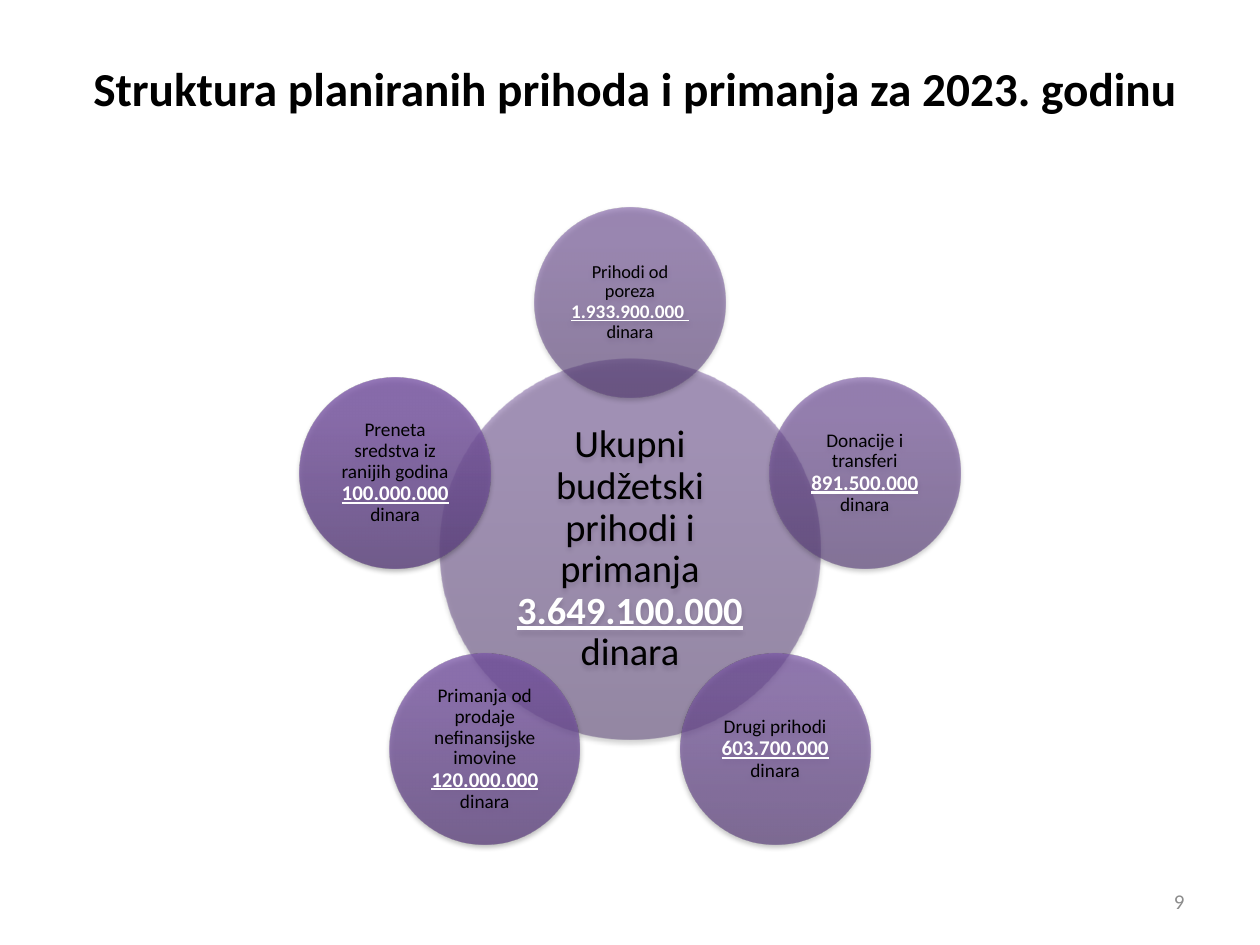
import math

import lxml.etree
import pptx
import pptx.dml.color
import pptx.enum.shapes
import pptx.enum.text
import pptx.oxml
import pptx.oxml.ns
import pptx.util

Inches = pptx.util.Inches
Align = pptx.enum.text.PP_ALIGN

COLORS = {"black": "000000", "white": "FFFFFF", "red": "FF0000", "gray": "8C8C8C"}
CENTER_X, CENTER_Y = 5, 4.36
CENTER_SIZE, SATELLITE_SIZE = 3.02, 1.51
ORBIT = 1.96
STOP_POSITIONS = (0, 80, 100)


class SlideBuilder:
    """Holds the text style and the slide being built."""

    def __init__(self, slide, font="Calibri"):
        self.slide = slide
        self.font = font

    def add_run(self, paragraph, text, size, color="black", bold=False, underline=False):
        run = paragraph.add_run()
        run.text = text
        run.font.name = self.font
        run.font.size = pptx.util.Pt(size)
        run.font.bold = bold
        run.font.underline = underline
        run.font.color.rgb = pptx.dml.color.RGBColor.from_string(COLORS[color])

    def fill_text(self, shape, runs, alignment, inset=None):
        frame = shape.text_frame
        frame.word_wrap = True
        frame.vertical_anchor = pptx.enum.text.MSO_ANCHOR.MIDDLE
        if inset is not None:
            frame.margin_left = frame.margin_right = Inches(inset)
            frame.margin_top = frame.margin_bottom = Inches(inset)
        paragraph = frame.paragraphs[0]
        paragraph.alignment = alignment
        for run in runs:
            self.add_run(paragraph, *run)
        return paragraph

    def text(self, left, top, width, height, runs, alignment):
        box = self.slide.shapes.add_textbox(
            Inches(left), Inches(top), Inches(width), Inches(height))
        self.fill_text(box, runs, alignment)

    def circle(self, center_x, center_y, size, stops, opacity, runs, inset):
        circle = self.slide.shapes.add_shape(
            pptx.enum.shapes.MSO_SHAPE.OVAL,
            Inches(center_x - size / 2), Inches(center_y - size / 2),
            Inches(size), Inches(size))
        circle.line.fill.background()
        self.gradient(circle, stops, opacity)
        self.shadow(circle)
        paragraph = self.fill_text(circle, runs, Align.CENTER, inset)
        paragraph.line_spacing = 0.9

    def gradient(self, shape, stops, opacity):
        stop_xml = "".join(
            f'<a:gs pos="{position * 1000}"><a:srgbClr val="{color}">'
            f'<a:alpha val="{opacity * 1000}"/></a:srgbClr></a:gs>'
            for position, color in zip(STOP_POSITIONS, stops))
        fill = pptx.oxml.parse_xml(
            f'<a:gradFill {pptx.oxml.ns.nsdecls("a")} rotWithShape="1">'
            f'<a:gsLst>{stop_xml}</a:gsLst><a:lin ang="16200000" scaled="0"/></a:gradFill>')
        shape.element.spPr.find(pptx.oxml.ns.qn("a:prstGeom")).addnext(fill)

    def shadow(self, shape):
        shape.shadow.inherit = False
        effects = shape.element.spPr.find(pptx.oxml.ns.qn("a:effectLst"))
        shadow = lxml.etree.SubElement(
            effects, pptx.oxml.ns.qn("a:outerShdw"),
            blurRad=str(pptx.util.Pt(3.1)), dist=str(pptx.util.Pt(1.8)),
            dir="5400000", rotWithShape="0")
        color = lxml.etree.SubElement(
            shadow, pptx.oxml.ns.qn("a:srgbClr"), val=COLORS["black"])
        lxml.etree.SubElement(color, pptx.oxml.ns.qn("a:alpha"), val="35000")


def amount_runs(label, amount):
    return [
        (label + " ", 11),
        (amount, 12, "white", True, True),
        (" ", 12, "white", True),
        ("dinara", 11),
    ]


def main():
    presentation = pptx.Presentation()
    presentation.slide_width, presentation.slide_height = Inches(10), Inches(7.5)
    builder = SlideBuilder(presentation.slides.add_slide(presentation.slide_layouts[6]))

    title = "Struktura planiranih prihoda i primanja za 2023. godinu"
    builder.text(0.54, 0.27, 9, 0.85, [(title, 27, "black", True)], Align.CENTER)
    builder.text(7.17, 6.95, 2.33, 0.4, [("9", 12, "gray")], Align.RIGHT)

    total = [
        ("Ukupni budžetski prihodi i primanja ", 22),
        ("3.649.100.000", 22, "white", True, True),
        (" dinara", 22),
    ]
    builder.circle(CENTER_X, CENTER_Y, CENTER_SIZE,
                   ("563D74", "705097", "704F99"), 50, total, 0.03)

    taxes = [
        ("Prihodi od poreza ", 10.5),
        ("1.933.900.000 ", 11, "white", True, True),
        (" ", 11, "red", False, True),
        ("dinara", 10.5),
    ]
    satellites = [
        (taxes, ("583E77", "72519A", "73509C")),
        (amount_runs("Donacije i transferi", "891.500.000"),
         ("5A407A", "75539E", "7551A0")),
        (amount_runs("Drugi prihodi", "603.700.000"),
         ("5C417C", "7754A1", "7753A4")),
        (amount_runs("Primanja od prodaje nefinansijske imovine", "120.000.000"),
         ("5E427E", "7956A4", "7A55A6")),
        (amount_runs("Preneta sredstva iz ranijih godina", "100.000.000"),
         ("5F4580", "7C59A6", "7C58A8")),
    ]
    for index, (runs, stops) in enumerate(satellites):
        angle = math.tau * index / len(satellites)
        builder.circle(CENTER_X + ORBIT * math.sin(angle),
                       CENTER_Y - ORBIT * math.cos(angle),
                       SATELLITE_SIZE, stops, 56 + 6 * index, runs, 0.02)

    presentation.save("out.pptx")


if __name__ == "__main__":
    main()
